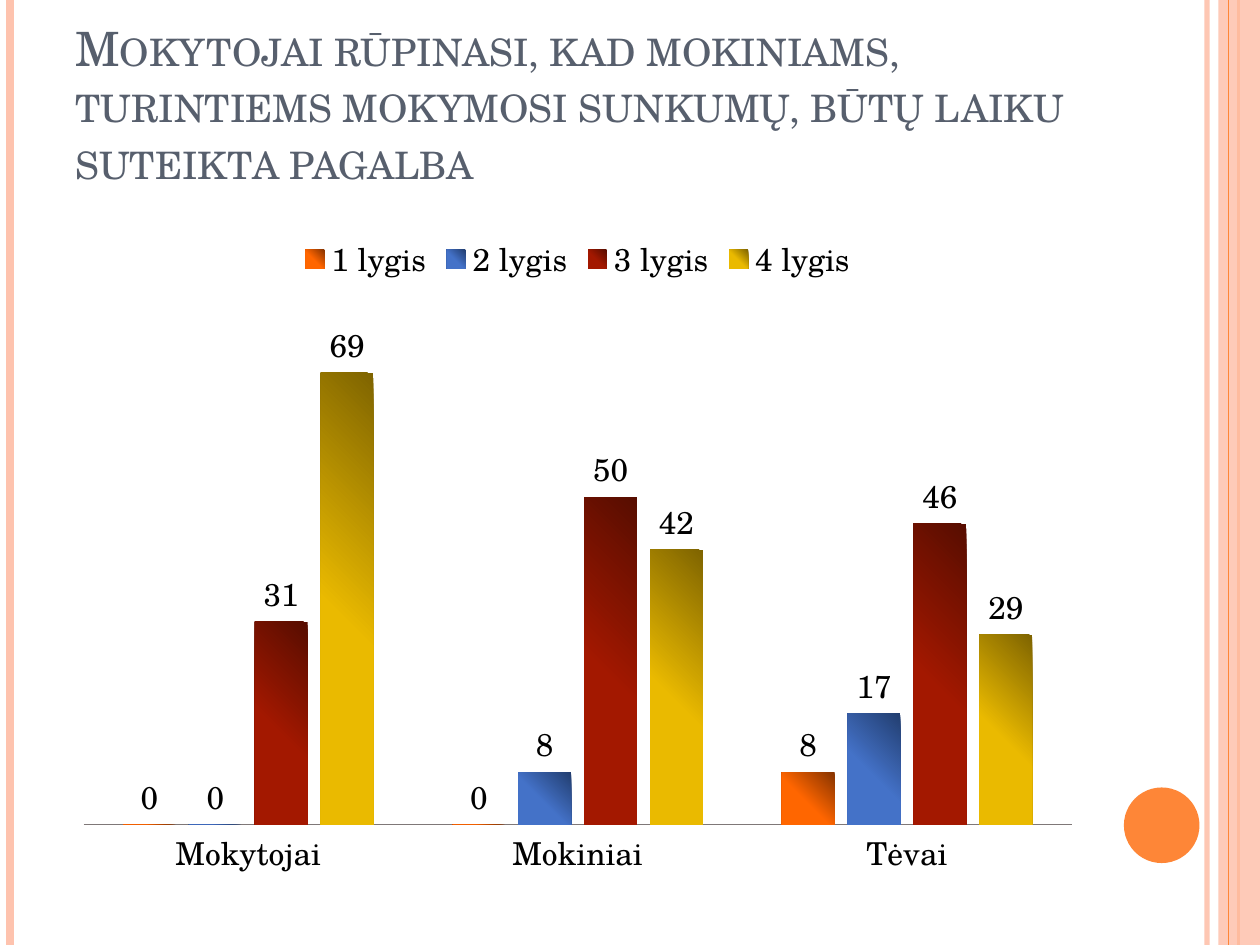
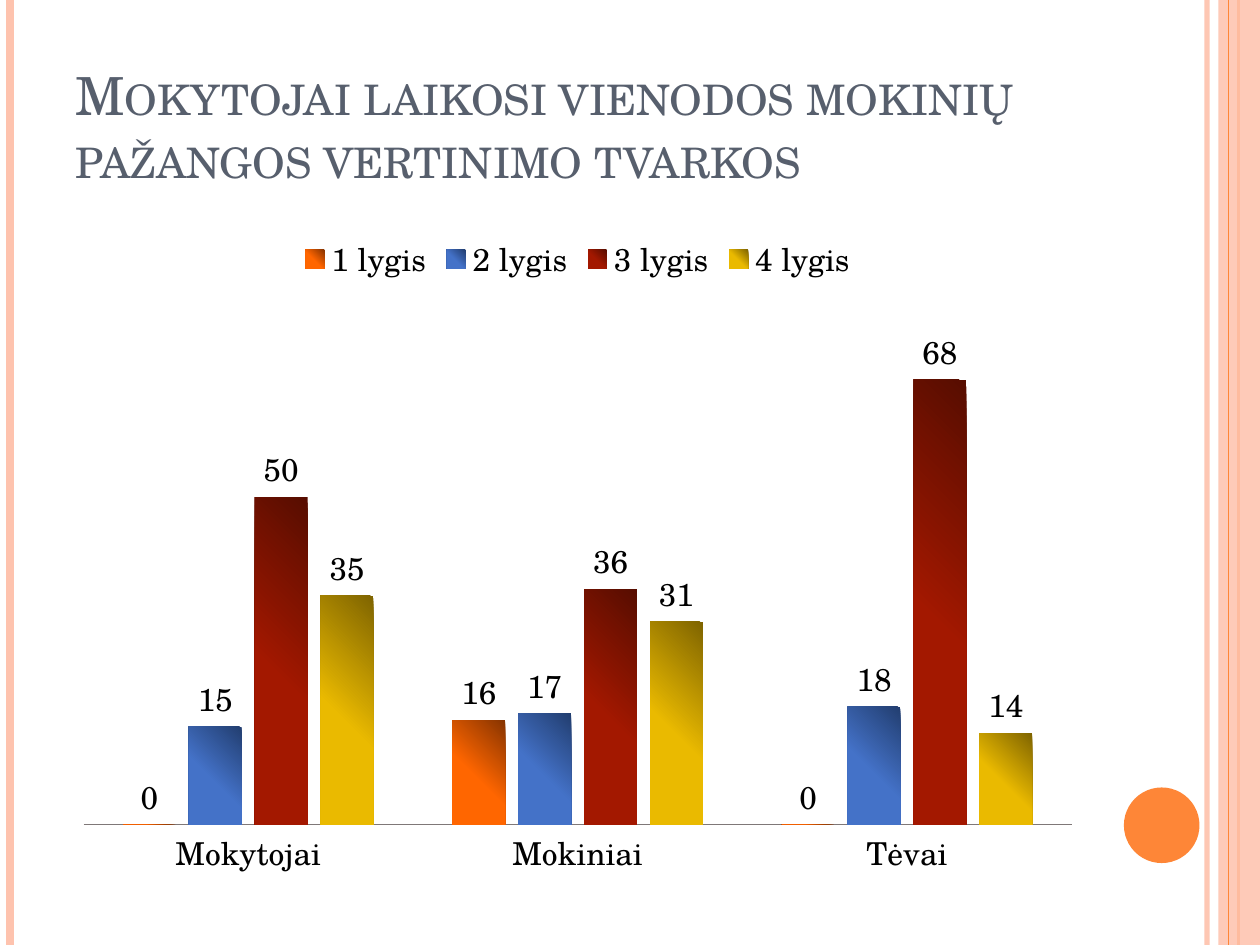
import pptx
import pptx.chart.data
import pptx.dml.color
import pptx.enum.chart
import pptx.enum.shapes
import pptx.enum.text
import pptx.oxml
import pptx.oxml.ns
import pptx.util

Inches = pptx.util.Inches
Pt = pptx.util.Pt
RGB = pptx.dml.color.RGBColor.from_string
chart_enum = pptx.enum.chart

THEME = {
    "font": "TeX Gyre Schola",
    "title": "575F6D",
    "text": "000000",
    "axis": "7F7878",
    "pale": "FEC3AE",
    "accent": "FE8637",
    "chart_size": 18,
    # bright and dark end of each series gradient
    "series": [("FF6600", "873400"), ("4472C8", "223E70"),
               ("A31800", "570D00"), ("EABA00", "7F6400")],
}
GROUPS = ["Mokytojai", "Mokiniai", "Tėvai"]
LEVELS = ["1 lygis", "2 lygis", "3 lygis", "4 lygis"]
SLIDES = [
    {"title": "Mokytojai rūpinasi, kad mokiniams, turintiems mokymosi sunkumų, "
              "būtų laiku suteikta pagalba",
     "size": 27,
     "values": [(0, 0, 8), (0, 8, 17), (31, 50, 46), (69, 42, 29)]},
    {"title": "Mokytojai laikosi vienodos mokinių pažangos vertinimo tvarkos",
     "size": 30,
     "values": [(0, 16, 0), (15, 17, 18), (50, 36, 68), (35, 31, 14)]},
]
# x position, width in points, colour, opacity in percent
LINES_BELOW_BAND = [(9.58, 3, "pale", 93), (0.08, 4.5, "pale", 100),
                    (9.83, 1.5, "accent", 100)]
LINES_ABOVE_BAND = [(9.75, 0.75, "accent", 100)]
DRAWING_NS = pptx.oxml.ns.nsdecls("a")
CHART_NS = pptx.oxml.ns.nsdecls("c")


def paint(fill, colour, opacity=100):
    """Fill with a theme colour at an opacity in percent."""
    fill.solid()
    fill.fore_color.rgb = RGB(THEME[colour])
    if opacity < 100:
        alpha = f'<a:alpha {DRAWING_NS} val="{opacity * 1000}"/>'
        for colour_node in fill._xPr.iter(pptx.oxml.ns.qn("a:srgbClr")):
            colour_node.append(pptx.oxml.parse_xml(alpha))


def draw_lines(page, lines):
    """Draw full-height vertical lines."""
    for x, width, colour, opacity in lines:
        line = page.shapes.add_connector(
            pptx.enum.shapes.MSO_CONNECTOR.STRAIGHT,
            Inches(x), 0, Inches(x), deck.slide_height)
        line.line.width = Pt(width)
        paint(line.line.fill, colour, opacity)
        line._element.spPr.append(
            pptx.oxml.parse_xml(f"<a:effectLst {DRAWING_NS}/>"))


deck = pptx.Presentation()
deck.slide_width, deck.slide_height = Inches(10), Inches(7.5)

for content in SLIDES:
    page = deck.slides.add_slide(deck.slide_layouts[6])

    # Side decoration
    draw_lines(page, LINES_BELOW_BAND)
    for kind, bounds, colour, opacity in [
            ("RECTANGLE", (9.67, 0, 0.33, 7.5), "pale", 87),
            ("OVAL", (8.92, 6.25, 0.6, 0.6), "accent", 100)]:
        shape = page.shapes.add_shape(
            pptx.enum.shapes.MSO_SHAPE[kind], *map(Inches, bounds))
        shape.shadow.inherit = False
        shape.line.fill.background()
        paint(shape.fill, colour, opacity)
    draw_lines(page, LINES_ABOVE_BAND)

    # Title in small capitals
    box = page.shapes.add_textbox(*map(Inches, (0.5, 0.3, 8.17, 1.25)))
    frame = box.text_frame
    frame.word_wrap = True
    frame.vertical_anchor = pptx.enum.text.MSO_ANCHOR.BOTTOM
    span = frame.paragraphs[0].add_run()
    span.text = content["title"]
    for name, value in {"name": THEME["font"], "size": Pt(content["size"])}.items():
        setattr(span.font, name, value)
    span.font.color.rgb = RGB(THEME["title"])
    span.font._element.set("cap", "small")

    # Column chart
    data = pptx.chart.data.CategoryChartData()
    data.categories = GROUPS
    for level, values in zip(LEVELS, content["values"]):
        data.add_series(level, values)
    chart = page.shapes.add_chart(
        chart_enum.XL_CHART_TYPE.COLUMN_CLUSTERED,
        *map(Inches, (0.5, 1.75, 8.17, 5.33)), data).chart
    chart.font.name = THEME["font"]
    chart.font.size = Pt(THEME["chart_size"])
    chart.font.color.rgb = RGB(THEME["text"])
    chart.has_title = False
    chart.has_legend = True
    plot = chart.plots[0]
    plot.has_data_labels = True

    tick_none = chart_enum.XL_TICK_MARK.NONE
    formats = [
        (chart.legend, {"position": chart_enum.XL_LEGEND_POSITION.TOP,
                        "include_in_layout": False}),
        (plot, {"gap_width": 150, "overlap": -25, "vary_by_categories": False}),
        (plot.data_labels, {
            "show_value": True,
            "position": chart_enum.XL_LABEL_POSITION.OUTSIDE_END}),
        (chart.category_axis, {"major_tick_mark": tick_none,
                               "minor_tick_mark": tick_none}),
        (chart.value_axis, {"visible": False, "has_major_gridlines": False,
                            "minimum_scale": 0, "maximum_scale": 80}),
    ]
    for target, settings in formats:
        for name, value in settings.items():
            setattr(target, name, value)
    chart.category_axis.format.line.color.rgb = RGB(THEME["axis"])

    # Glow from the lower left corner of every column
    for series, (bright, dark) in zip(plot.series, THEME["series"]):
        series.invert_if_negative = False
        stops = "".join(
            f'<a:gs pos="{place * 1000}"><a:srgbClr val="{colour}"/></a:gs>'
            for place, colour in [(0, bright), (45, bright), (100, dark)])
        series._element.get_or_add_spPr().append(pptx.oxml.parse_xml(
            f'<a:gradFill {DRAWING_NS} rotWithShape="1"><a:gsLst>{stops}</a:gsLst>'
            '<a:path path="circle"><a:fillToRect t="100000" r="100000"/></a:path>'
            "</a:gradFill>"))

    # Fixed plot area, as fractions of the chart
    places = "".join(
        f'<c:{name} val="{value}"/>' for name, value in
        {"layoutTarget": "inner", "xMode": "edge", "yMode": "edge",
         "x": 0.02, "y": 0.12, "w": 0.96, "h": 0.78}.items())
    plot_area = chart._chartSpace.chart.plotArea
    for layout in plot_area.findall(pptx.oxml.ns.qn("c:layout")):
        plot_area.remove(layout)
    plot_area.insert(0, pptx.oxml.parse_xml(
        f"<c:layout {CHART_NS}><c:manualLayout>{places}</c:manualLayout></c:layout>"))

deck.save("out.pptx")
